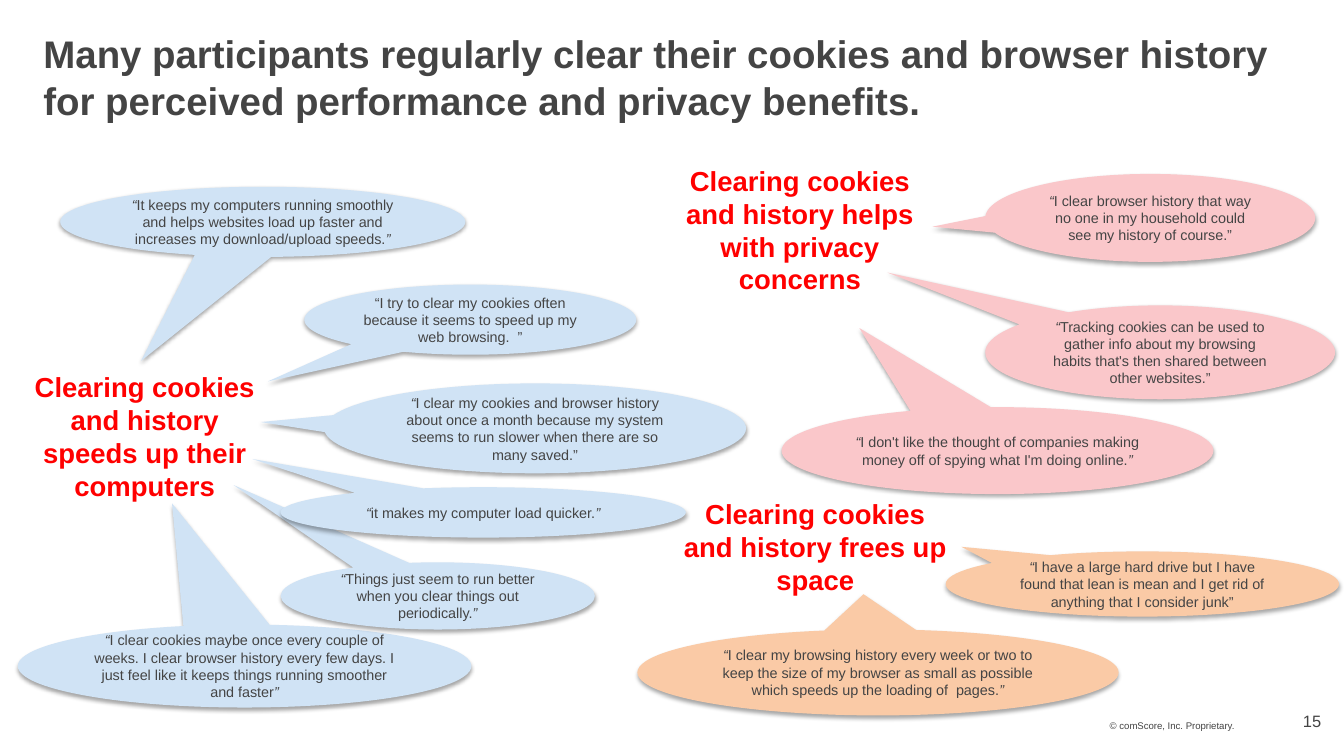
from lxml import etree
from pptx import Presentation
from pptx.dml.color import RGBColor
from pptx.enum.shapes import MSO_SHAPE
from pptx.enum.text import MSO_ANCHOR, PP_ALIGN
from pptx.oxml.ns import qn
from pptx.util import Inches, Pt

GREY = RGBColor(0x44, 0x44, 0x44)
RED = RGBColor(0xFF, 0x00, 0x00)
BLUE = RGBColor(0xD0, 0xE3, 0xF5)
PINK = RGBColor(0xFA, 0xC7, 0xCA)
PEACH = RGBColor(0xFA, 0xCA, 0xA6)

BUBBLE = MSO_SHAPE.OVAL_CALLOUT
LEFT, MID, RIGHT = PP_ALIGN.LEFT, PP_ALIGN.CENTER, PP_ALIGN.RIGHT
CENTER, BOTTOM = MSO_ANCHOR.MIDDLE, MSO_ANCHOR.BOTTOM

TITLE = {"size": Pt(28), "bold": True}
HEAD = {"size": Pt(20), "bold": True}
QUOTE = {"size": Pt(10.5)}
SMALL = {"size": Pt(7)}
NUMBER = {"size": Pt(12)}

# Each group: box, fill, heading (text, place in box),
# quotes (place in box, tail tip, text, opening italic, closing italic)
GROUPS = [
    ((0.18, 1.89, 7.37, 5.27), BLUE,
     ("Clearing cookies and history speeds up their computers",
      (0, 1.84, 2.57, 1.41)),
     [((0.43, 0, 4.1, 0.71), (-0.3, 1.98),
       "It keeps my computers running smoothly and helps websites load up "
       "faster and increases my download/upload speeds.", True, True),
      ((2.9, 0.99, 3.36, 0.71), (-0.61, 0.88),
       "I try to clear my cookies often because it seems to speed up my "
       "web browsing.  ", False, False),
      ((3.1, 1.99, 4.27, 0.91), (-0.65, -0.07),
       "I clear my cookies and browser history about once a month because "
       "my system seems to run slower when there are so many saved.",
       True, False),
      ((0, 4.43, 4.59, 0.84), (-0.16, -1.96),
       "I clear cookies maybe once every couple of weeks. I clear browser "
       "history every few days. I just feel like it keeps things running "
       "smoother and faster", True, True),
      ((2.66, 3.8, 3.18, 0.68), (-0.65, -1.65),
       "Things just seem to run better when you clear things out "
       "periodically.", True, True),
      ((2.66, 3.04, 4.1, 0.51), (-0.57, -1.06),
       "it makes my computer load quicker.", True, True)]),
    ((6.81, 1.65, 6.7, 3.35), PINK,
     ("Clearing cookies and history helps with privacy concerns",
      (0, 0, 2.57, 1.4)),
     [((3.16, 0.11, 3.34, 0.89), (-0.66, 0.1),
       "I clear browser history that way no one in my household could see "
       "my history of course.", True, False),
      ((3.16, 1.44, 3.54, 0.95), (-0.78, -0.85),
       "Tracking cookies can be used to gather info about my browsing "
       "habits that's then shared between other websites.", True, False),
      ((1.1, 2.47, 4.37, 0.88), (-0.32, -1.41),
       "I don't like the thought of companies making money off of spying "
       "what I'm doing online.", True, True)]),
    ((6.45, 5.04, 7.1, 2.2), PEACH,
     ("Clearing cookies and history frees up space",
      (0.33, 0, 2.94, 1.05)),
     [((3.12, 0.54, 3.98, 0.66), (-0.46, -0.57),
       "I have a large hard drive but I have found that lean is mean and I "
       "get rid of anything that I consider junk", True, False),
      ((0, 1.33, 4.87, 0.87), (-0.03, -0.91),
       "I clear my browsing history every week or two to keep the size of "
       "my browser as small as possible which speeds up the loading of "
       " pages.", True, True)]),
]


def place(box, part):
    """Turn a place inside a box into a place on the slide."""
    return box[0] + part[0], box[1] + part[1], part[2], part[3]


def add_run(para, text, look, color=GREY, italic=False):
    run = para.add_run()
    run.text = text
    font = run.font
    for name, value in {"name": "Arial", "italic": italic, **look}.items():
        setattr(font, name, value)
    font.color.rgb = color


def add_text(slide, box, text, look, color=GREY, align=LEFT, anchor=BOTTOM,
             pad=(0.12, 0, 0.12, 0.06)):
    frame = slide.shapes.add_textbox(*map(Inches, box)).text_frame
    frame.word_wrap = True
    frame.vertical_anchor = anchor
    for side, inset in zip(("left", "top", "right", "bottom"), pad):
        setattr(frame, "margin_" + side, Inches(inset))
    para = frame.paragraphs[0]
    para.alignment = align
    add_run(para, text, look, color)
    return para


def add_shadow(shape):
    shape.shadow.inherit = False
    effects = shape._element.spPr.find(qn("a:effectLst"))
    outer = etree.SubElement(
        effects, qn("a:outerShdw"), blurRad=str(Pt(3.1)), dist=str(Pt(1.8)),
        dir="5400000", rotWithShape="0")
    black = etree.SubElement(outer, qn("a:srgbClr"), val="000000")
    etree.SubElement(black, qn("a:alpha"), val="35000")


def add_bubble(slide, box, tip, fill, text, opening, closing):
    shape = slide.shapes.add_shape(BUBBLE, *map(Inches, box))
    shape.adjustments[0], shape.adjustments[1] = tip
    shape.fill.solid()
    shape.fill.fore_color.rgb = fill
    shape.line.fill.background()
    add_shadow(shape)
    frame = shape.text_frame
    frame.word_wrap = True
    frame.vertical_anchor = CENTER
    para = frame.paragraphs[0]
    para.alignment = MID
    for part, italic in (("“", opening), (text, False), ("”", closing)):
        add_run(para, part, QUOTE, italic=italic)


def add_group(slide, box, fill, head, quotes):
    text, part = head
    add_text(slide, place(box, part), text, HEAD, RED, MID)
    for part, tip, text, opening, closing in quotes:
        add_bubble(slide, place(box, part), tip, fill, text, opening, closing)


def add_footer(slide, box):
    note = add_text(slide, place(box, (0, 0, 1.5, 0.51)),
                    "© comScore, Inc. Proprietary.", SMALL,
                    pad=(0, 0.06, 0, 0.06))
    note.line_spacing = Pt(7.9)
    add_text(slide, place(box, (1.29, 0.11, 1.09, 0.4)), "15", NUMBER,
             align=RIGHT, pad=(0.24, 0.06, 0.24, 0.06))


def main():
    deck = Presentation()
    deck.slide_width, deck.slide_height = Inches(13.6), Inches(7.65)
    slide = deck.slides.add_slide(deck.slide_layouts[6])

    # Title
    add_text(slide, (0.32, 0.18, 13, 1.25),
             "Many participants regularly clear their cookies and browser "
             "history for perceived performance and privacy benefits.",
             TITLE, anchor=CENTER)

    # Headings with their quotes
    for group in GROUPS:
        add_group(slide, *group)

    # Copyright line and page number
    add_footer(slide, (11.23, 6.95, 2.38, 0.51))
    deck.save("out.pptx")


if __name__ == "__main__":
    main()
